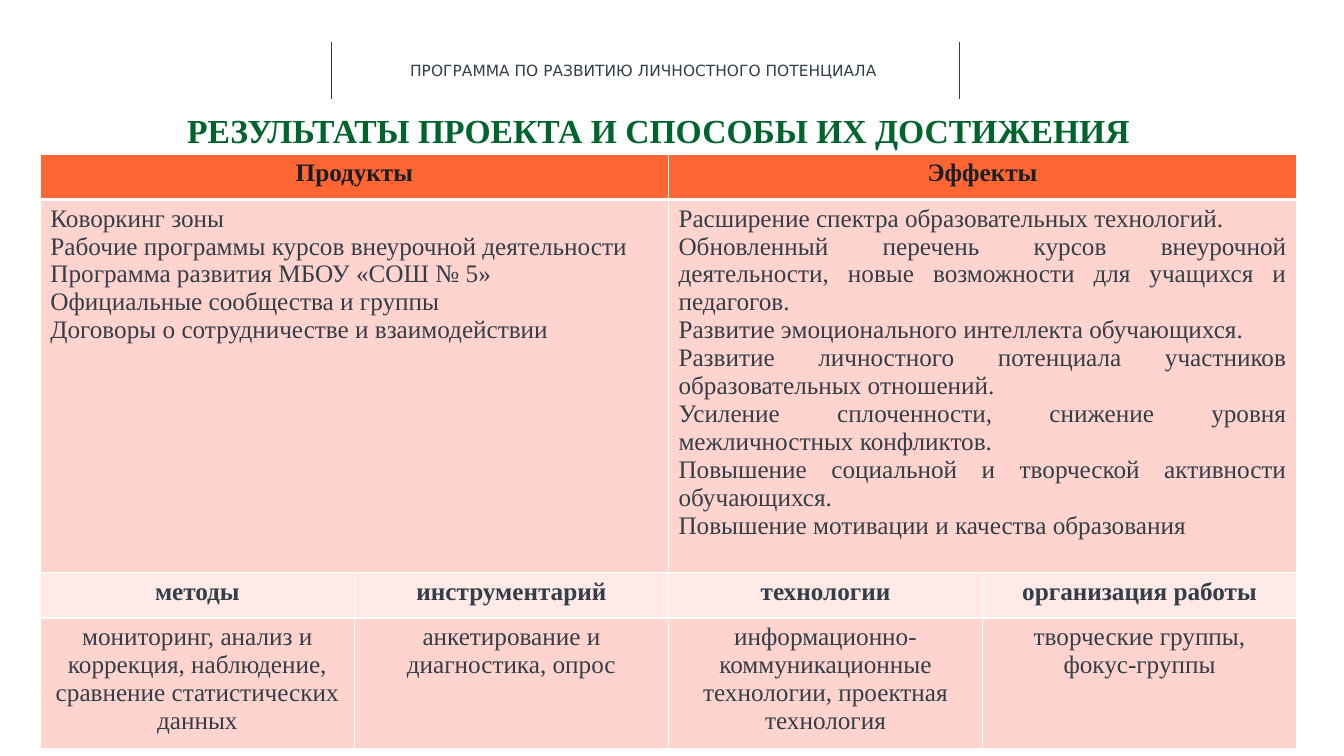
import pptx
import pptx.util
import pptx.dml.color
import pptx.enum.shapes
import pptx.enum.text
import pptx.oxml
import pptx.oxml.ns
import pptx.oxml.xmlchemy

ALIGN = pptx.enum.text.PP_ALIGN
ANCHOR = pptx.enum.text.MSO_ANCHOR
SLIDE_W, SLIDE_H = 13.33, 7.5
SERIF, SANS = "Times New Roman", "DejaVu Sans"
SLATE, INK, GREEN = "333E48", "1A1F24", "00642D"
ORANGE, ROSE, PALE, WHITE = "FF6633", "FFD3CE", "FFEAE8", "FFFFFF"

PRODUCTS = [
    "Коворкинг зоны",
    "Рабочие программы курсов внеурочной деятельности",
    "Программа развития МБОУ «СОШ № 5»",
    "Официальные сообщества и группы",
    "Договоры о сотрудничестве и взаимодействии",
]
EFFECTS = [
    "Расширение спектра образовательных технологий.",
    "Обновленный перечень курсов внеурочной деятельности, новые возможности для учащихся и педагогов.",
    "Развитие эмоционального интеллекта обучающихся.",
    "Развитие личностного потенциала участников образовательных отношений.",
    "Усиление сплоченности, снижение уровня межличностных конфликтов.",
    "Повышение социальной и творческой активности обучающихся.",
    "Повышение мотивации и качества образования",
]
MEANS = [
    ("методы", ["мониторинг, анализ и коррекция, наблюдение, сравнение статистических данных"]),
    ("инструментарий", ["анкетирование и диагностика, опрос"]),
    ("технологии", ["информационно-коммуникационные технологии, проектная технология"]),
    ("организация работы", ["творческие группы,", "фокус-группы"]),
]
ROW_HEIGHTS = [0.45, 3.7, 0.45, 1.3]


def inches(*lengths):
    return [pptx.util.Inches(length) for length in lengths]


def color(hex_code):
    return pptx.dml.color.RGBColor.from_string(hex_code)


def write(frame, lines, size, ink, font=SERIF, bold=False, align=ALIGN.CENTER):
    for index, line in enumerate(lines):
        paragraph = frame.add_paragraph() if index else frame.paragraphs[0]
        paragraph.alignment = align
        run = paragraph.add_run()
        run.text = line
        run.font.name = font
        run.font.size = pptx.util.Pt(size)
        run.font.bold = bold
        run.font.color.rgb = color(ink)


def add_program_banner(slide, left, top, width, height):
    for x in (left, left + width):
        divider = slide.shapes.add_connector(
            pptx.enum.shapes.MSO_CONNECTOR.STRAIGHT, *inches(x, top, x, top + height))
        divider.line.color.rgb = color(SLATE)
        divider.line.width = pptx.util.Pt(0.5)
        divider._element.spPr.append(pptx.oxml.xmlchemy.OxmlElement("a:effectLst"))
    program = slide.shapes.add_textbox(
        *inches(left + 0.68, top + height / 4, width - 1.36, height / 2))
    program.text_frame.word_wrap = True
    write(program.text_frame, ["ПРОГРАММА ПО РАЗВИТИЮ ЛИЧНОСТНОГО ПОТЕНЦИАЛА"],
          11, SLATE, SANS, align=ALIGN.LEFT)


def add_heading(slide, left, top, width, height):
    heading = slide.shapes.add_textbox(*inches(left, top, width, height)).text_frame
    heading.margin_left = heading.margin_right = heading.margin_top = heading.margin_bottom = 0
    heading.word_wrap = True
    heading.vertical_anchor = ANCHOR.MIDDLE
    write(heading, ["РЕЗУЛЬТАТЫ ПРОЕКТА И СПОСОБЫ ИХ ДОСТИЖЕНИЯ"], 24, GREEN, bold=True)
    heading.paragraphs[0].line_spacing = 0.9


def draw_borders(cell, top, bottom):
    properties = cell._tc.get_or_add_tcPr()
    for index, (side, points) in enumerate((("L", 1), ("R", 1), ("T", top), ("B", bottom))):
        border = pptx.oxml.parse_xml(
            f'<a:ln{side} {pptx.oxml.ns.nsdecls("a")} w="{pptx.util.Pt(points)}">'
            f'<a:solidFill><a:srgbClr val="{WHITE}"/></a:solidFill></a:ln{side}>')
        properties.insert(index, border)


def add_results_table(slide, left, top, width, height):
    table = slide.shapes.add_table(
        len(ROW_HEIGHTS), len(MEANS), *inches(left, top, width, height)).table
    table.first_row = table.horz_banding = False
    for column in table.columns:
        column.width = pptx.util.Inches(width / len(MEANS))
    for row, share in zip(table.rows, ROW_HEIGHTS):
        row.height = pptx.util.Inches(height * share / sum(ROW_HEIGHTS))

    for row, fill in enumerate((ORANGE, ROSE, PALE, ROSE)):
        for column in range(len(MEANS)):
            cell = table.cell(row, column)
            cell.fill.solid()
            cell.fill.fore_color.rgb = color(fill)
            draw_borders(cell, 3 if row == 1 else 1, 3 if row == 0 else 1)

    for column, (caption, results) in zip((0, 2), (("Продукты", PRODUCTS), ("Эффекты", EFFECTS))):
        for row in (0, 1):
            table.cell(row, column).merge(table.cell(row, column + 1))
        write(table.cell(0, column).text_frame, [caption], 18, INK, bold=True)
        write(table.cell(1, column).text_frame, results, 18, SLATE, align=ALIGN.JUSTIFY)

    for column, (caption, details) in enumerate(MEANS):
        write(table.cell(2, column).text_frame, [caption], 18, SLATE, bold=True)
        write(table.cell(3, column).text_frame, details, 18, SLATE)


def main():
    deck = pptx.Presentation()
    deck.slide_width, deck.slide_height = inches(SLIDE_W, SLIDE_H)
    slide = deck.slides.add_slide(deck.slide_layouts[6])
    margin = 0.03 * SLIDE_W
    add_program_banner(slide, 3.29, 0.42, 6.23, 0.56)
    add_heading(slide, margin, 1.14, 0.92 * SLIDE_W, 0.36)
    add_results_table(slide, margin, 1.53, 12.46, sum(ROW_HEIGHTS))
    deck.save("out.pptx")


if __name__ == "__main__":
    main()
